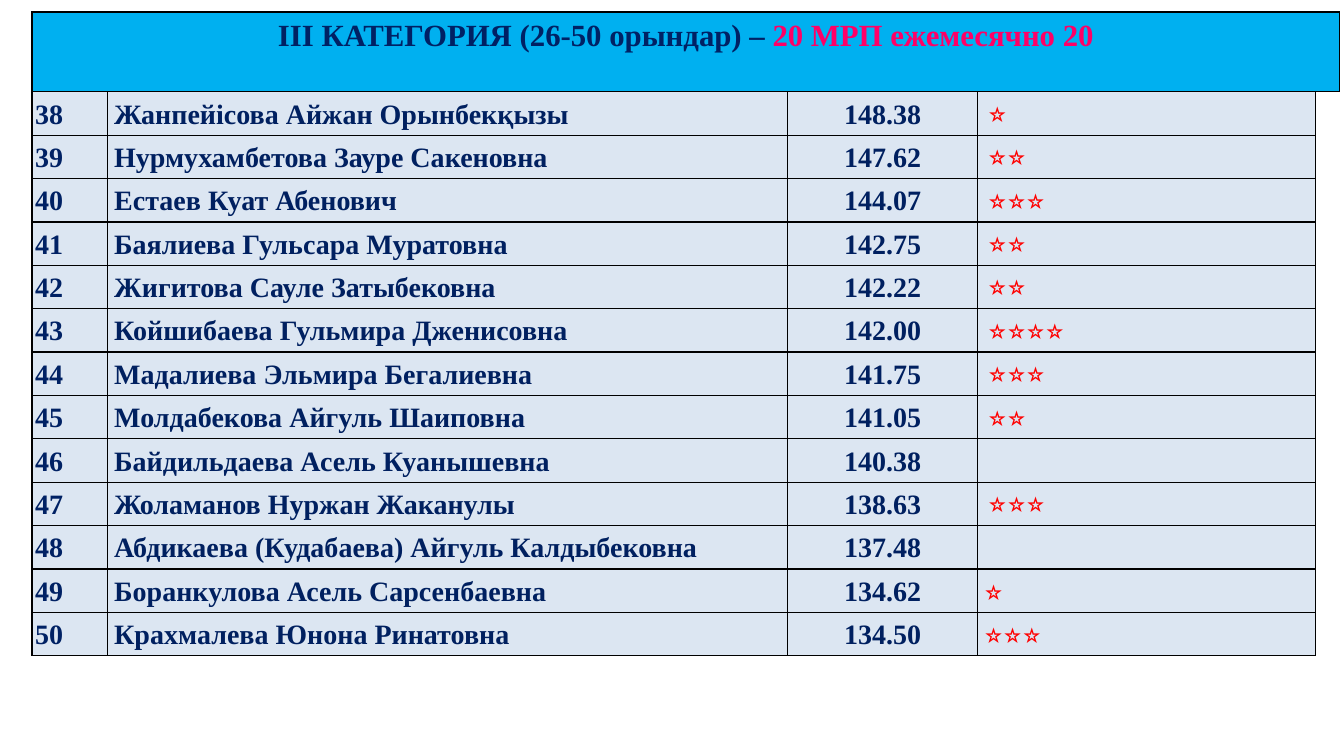
from dataclasses import dataclass

from lxml.etree import SubElement
from pptx import Presentation
from pptx.dml.color import RGBColor
from pptx.enum.text import MSO_ANCHOR, PP_ALIGN
from pptx.oxml.ns import qn
from pptx.util import Pt

HEADING = [("ІIІ КАТЕГОРИЯ (26-50 орындар) – ", "navy"), ("20 МРП ежемесячно 20", "pink")]
FIRST_PLACE = 38
WINNERS = [
    ("Жанпейісова Айжан Орынбекқызы", "148.38", "⭐"),
    ("Нурмухамбетова Зауре Сакеновна", "147.62", "⭐⭐"),
    ("Естаев Куат Абенович", "144.07", "⭐⭐⭐"),
    ("Баялиева Гульсара Муратовна", "142.75", "⭐⭐"),
    ("Жигитова Сауле Затыбековна", "142.22", "⭐⭐"),
    ("Койшибаева Гульмира Дженисовна", "142.00", "⭐⭐⭐⭐"),
    ("Мадалиева Эльмира Бегалиевна", "141.75", "⭐⭐⭐"),
    ("Молдабекова Айгуль Шаиповна", "141.05", "⭐⭐"),
    ("Байдильдаева Асель Куанышевна", "140.38", ""),
    ("Жоламанов Нуржан Жаканулы", "138.63", "⭐⭐⭐"),
    ("Абдикаева (Кудабаева) Айгуль Калдыбековна", "137.48", ""),
    ("Боранкулова Асель Сарсенбаевна", "134.62", "⭐"),
    ("Крахмалева Юнона Ринатовна", "134.50", "⭐⭐⭐"),
]
NARROW_STAR_ROWS = 2


@dataclass(frozen=True)
class Theme:
    font: str = "Times New Roman"
    heading_size: float = 22
    body_size: float = 20
    navy: str = "002164"
    name: str = "002060"
    pink: str = "FF0066"
    star: str = "FF0000"
    heading_fill: str = "00B0F0"
    body_fill: str = "DCE6F2"
    border: str = "000000"
    border_width: float = 0.96
    line_spacing: float = 1.07


THEME = Theme()
LEFT, TOP = 22.8, 8.6
COLUMN_WIDTHS = [54.3, 485.3, 136.1, 241.2, 16.6]
HEADING_HEIGHT, ROW_HEIGHT = 57, 31
VERTICAL_INSET = 3.2
PLACE_INSET, TEXT_INSET, STAR_INSET = 2.4, 4.5, 7.2
NO_STYLE = "{2D5ABB26-0587-4C30-8999-92F81FD0307C}"


def draw_borders(cell, sides):
    properties = cell._tc.get_or_add_tcPr()
    for side in sides:
        line = SubElement(properties, qn(f"a:ln{side}"), w=str(Pt(THEME.border_width)))
        fill = SubElement(line, qn("a:solidFill"))
        SubElement(fill, qn("a:srgbClr"), val=THEME.border)


def paint(cell, color):
    cell.fill.solid()
    cell.fill.fore_color.rgb = RGBColor.from_string(color)


def write(cell, spans, size, inset, align=PP_ALIGN.LEFT, anchor=MSO_ANCHOR.MIDDLE, bold=True):
    cell.vertical_anchor = anchor
    cell.margin_left = cell.margin_right = Pt(inset)
    cell.margin_top = cell.margin_bottom = Pt(VERTICAL_INSET)
    para = cell.text_frame.paragraphs[0]
    para.alignment = align
    para.line_spacing = THEME.line_spacing
    for text, color in spans:
        span = para.add_run()
        span.text = text
        span.font.name = THEME.font
        span.font.size = Pt(size)
        span.font.bold = bold
        span.font.color.rgb = RGBColor.from_string(color)


def add_heading(table):
    cells = list(table.rows[0].cells)
    cells[0].merge(cells[-1])
    for cell in cells:
        draw_borders(cell, "LRT")
        paint(cell, THEME.heading_fill)
    spans = [(text, getattr(THEME, color)) for text, color in HEADING]
    write(cells[0], spans, THEME.heading_size, PLACE_INSET, PP_ALIGN.CENTER, MSO_ANCHOR.TOP)


def add_winner(table, index, winner):
    name, score, stars = winner
    *cells, margin_cell = table.rows[index + 1].cells
    for cell in cells:
        draw_borders(cell, "LRTB")
        paint(cell, THEME.body_fill)
    draw_borders(margin_cell, "L")
    place_cell, name_cell, score_cell, star_cell = cells
    size = THEME.body_size
    write(place_cell, [(str(FIRST_PLACE + index), THEME.navy)], size, PLACE_INSET)
    write(name_cell, [(name, THEME.name)], size, TEXT_INSET)
    write(score_cell, [(score, THEME.name)], size, TEXT_INSET, PP_ALIGN.CENTER)
    if stars:
        narrow = index >= len(WINNERS) - NARROW_STAR_ROWS
        inset = TEXT_INSET if narrow else STAR_INSET
        anchor = MSO_ANCHOR.MIDDLE if narrow else MSO_ANCHOR.TOP
        write(star_cell, [(stars, THEME.star)], size, inset, anchor=anchor, bold=False)


def main():
    deck = Presentation()
    deck.slide_width, deck.slide_height = Pt(960), Pt(540)
    page = deck.slides.add_slide(deck.slide_layouts[6])
    row_heights = [HEADING_HEIGHT] + [ROW_HEIGHT] * len(WINNERS)
    frame = page.shapes.add_table(
        len(row_heights), len(COLUMN_WIDTHS), Pt(LEFT), Pt(TOP),
        Pt(sum(COLUMN_WIDTHS)), Pt(sum(row_heights)),
    )
    table = frame.table
    table.first_row = table.horz_banding = False
    next(frame._element.iter(qn("a:tableStyleId"))).text = NO_STYLE
    for column, width in zip(table.columns, COLUMN_WIDTHS):
        column.width = Pt(width)
    for row, height in zip(table.rows, row_heights):
        row.height = Pt(height)
    add_heading(table)
    for index, winner in enumerate(WINNERS):
        add_winner(table, index, winner)
    deck.save("out.pptx")


if __name__ == "__main__":
    main()
